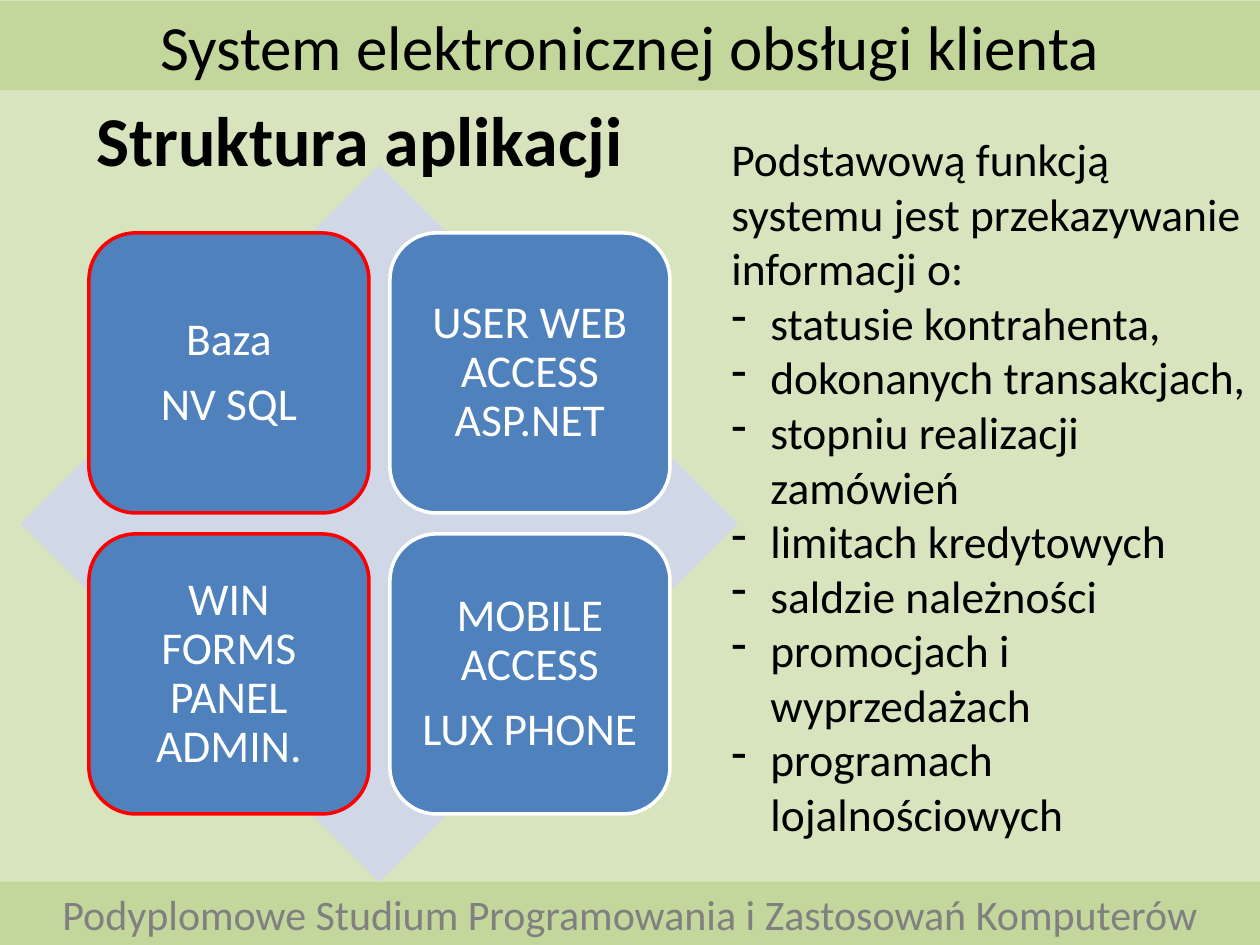
from lxml import etree
from pptx import Presentation
from pptx import util as u
from pptx.dml.color import RGBColor
from pptx.enum import shapes, text
from pptx.oxml.ns import qn

PX = 914400 / 126
COLORS = {
    "background": "D7E4BD",
    "band": "C3D69B",
    "diamond": "D0D8E8",
    "tile": "4F81BD",
    "white": "FFFFFF",
    "red": "FF0000",
    "black": "000000",
    "gray": "808080",
}
TILE = 280
TILE_STEP = 301
TILE_ORIGIN = (89, 233)
TILES = [
    (["Baza", "NV SQL"], "red"),
    (["USER WEB ACCESS ASP.NET"], "white"),
    (["WIN FORMS PANEL ADMIN."], "red"),
    (["MOBILE ACCESS", "LUX PHONE"], "white"),
]
INTRO = "Podstawową funkcją systemu jest przekazywanie informacji o:"
TOPICS = [
    "statusie kontrahenta,",
    "dokonanych transakcjach,",
    "stopniu realizacji zamówień",
    "limitach kredytowych",
    "saldzie należności",
    "promocjach i wyprzedażach",
    "programach lojalnościowych",
]
CENTERED = {"alignment": text.PP_ALIGN.CENTER}
TILE_PARA = {**CENTERED, "line_spacing": 0.9, "space_after": u.Pt(9)}
TILE_FRAME = {
    "vertical_anchor": text.MSO_ANCHOR.MIDDLE,
    **{f"margin_{side}": px_margin for side, px_margin in
       zip(("left", "top", "right", "bottom"), [u.Inches(0.11)] * 4)},
}
TOP_FRAME = {"vertical_anchor": text.MSO_ANCHOR.TOP}


def px(length):
    return u.Emu(round(length * PX))


def color(name):
    return RGBColor.from_string(COLORS[name])


def set_format(target, values):
    for name, value in values.items():
        setattr(target, name, value)


def add_block(page, kind, place, fill, line=None):
    block = page.shapes.add_shape(kind, *map(px, place))
    block.shadow.inherit = False
    block.fill.solid()
    block.fill.fore_color.rgb = color(fill)
    if line:
        block.line.color.rgb = color(line)
        block.line.width = u.Pt(2)
    else:
        block.line.fill.background()
    return block


def write(box, lines, size, ink, frame_format, para_format, bold=False):
    frame = box.text_frame
    frame.word_wrap = True
    set_format(frame, frame_format)
    for index, line in enumerate(lines):
        para = frame.add_paragraph() if index else frame.paragraphs[0]
        set_format(para, para_format)
        span = para.add_run()
        span.text = line
        set_format(span.font, {"name": "Calibri", "size": u.Pt(size), "bold": bold})
        span.font.color.rgb = color(ink)


def add_text(page, place, lines, size, para_format, bold=False):
    box = page.shapes.add_textbox(*map(px, place))
    write(box, lines, size, "black", TOP_FRAME, para_format, bold)
    return box


def add_band(page, place, line, size, ink):
    band = add_block(page, shapes.MSO_SHAPE.RECTANGLE, place, "band")
    write(band, [line], size, ink, TOP_FRAME, CENTERED)


def add_tiles(page):
    left, top = TILE_ORIGIN
    for index, (lines, line) in enumerate(TILES):
        row, column = divmod(index, 2)
        place = (left + column * TILE_STEP, top + row * TILE_STEP, TILE, TILE)
        tile = add_block(page, shapes.MSO_SHAPE.ROUNDED_RECTANGLE, place, "tile", line)
        write(tile, lines, 26, "white", TILE_FRAME, TILE_PARA)


def add_dash(para):
    props = para._p.get_or_add_pPr()
    indent = px(39)
    props.set("marL", str(indent))
    props.set("indent", str(-indent))
    etree.SubElement(props, qn("a:buFontTx"))
    etree.SubElement(props, qn("a:buChar")).set("char", "-")


def main():
    deck = Presentation()
    set_format(deck, {"slide_width": px(1260), "slide_height": px(945)})
    page = deck.slides.add_slide(deck.slide_layouts[6])
    page.background.fill.solid()
    page.background.fill.fore_color.rgb = color("background")

    add_band(page, (0, 1, 1260, 89), "System elektronicznej obsługi klienta", 36, "black")
    add_band(page, (0, 882, 1260, 63),
             "Podyplomowe Studium Programowania i Zastosowań Komputerów", 24, "gray")
    add_text(page, (0, 90, 719, 97), ["Struktura aplikacji"], 40, CENTERED, bold=True)
    add_block(page, shapes.MSO_SHAPE.DIAMOND, (21, 165, 717, 717), "diamond")
    add_tiles(page)
    functions = add_text(page, (719, 125, 541, 730), [INTRO, *TOPICS], 26, {})
    for para in functions.text_frame.paragraphs[1:]:
        add_dash(para)
    deck.save("out.pptx")


if __name__ == "__main__":
    main()
